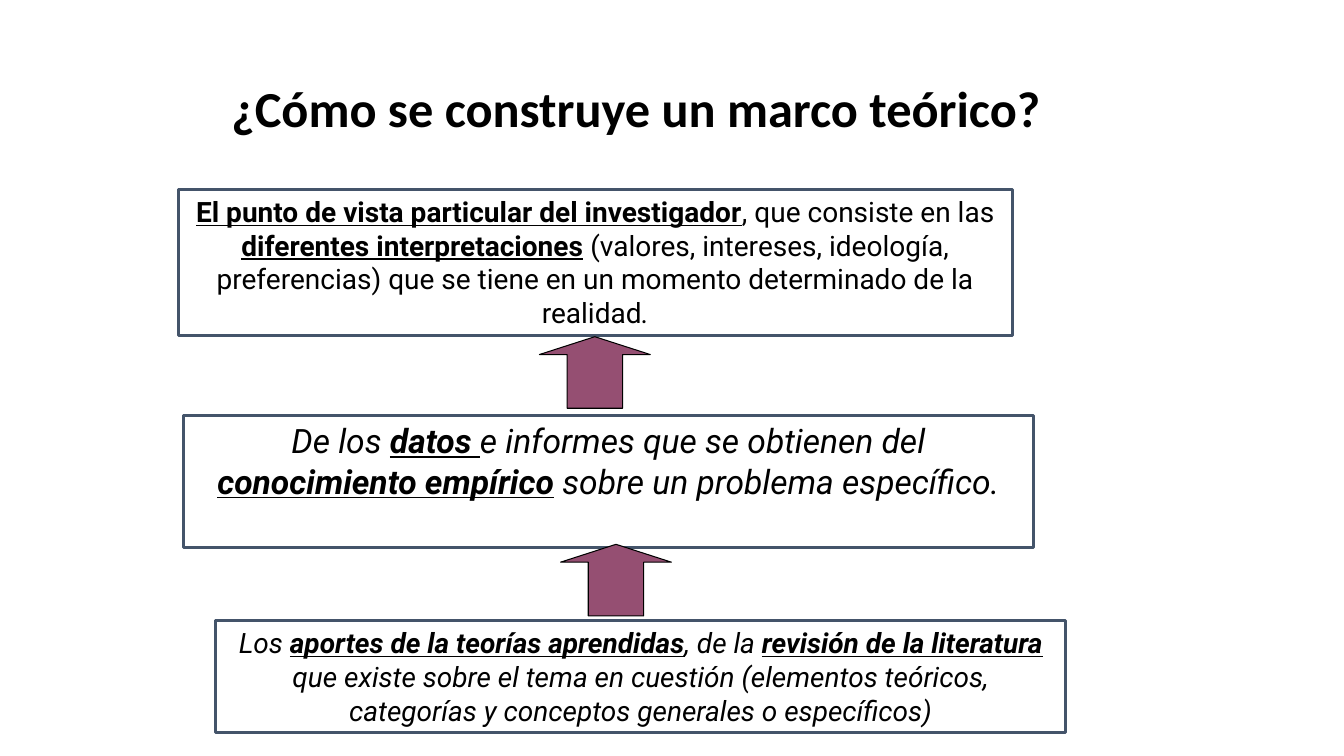
import pptx
import pptx.dml.color
import pptx.enum.shapes
import pptx.enum.text
import pptx.util
from pptx.util import Inches

COLORS = {"text": "000000", "frame": "44546A", "arrow": "954F72"}
SHAPES = pptx.enum.shapes.MSO_SHAPE
TEXT = pptx.enum.text


def rgb(name):
    return pptx.dml.color.RGBColor.from_string(COLORS[name])


class FrameworkSlide:
    """Holds the current slide and the style of its elements."""

    title_font = "Calibri"
    body_font = "Roboto"

    def __init__(self, deck):
        self.slide = deck.slides.add_slide(deck.slide_layouts[6])

    def add_words(self, paragraph, text, font, size, bold=False, italic=False, underline=False):
        run = paragraph.add_run()
        run.text = text
        run.font.name = font
        run.font.size = pptx.util.Pt(size)
        run.font.bold = bold
        run.font.italic = italic
        run.font.underline = underline
        run.font.color.rgb = rgb("text")

    def title(self, place, text):
        frame = self.slide.shapes.add_textbox(*map(Inches, place)).text_frame
        frame.word_wrap = True
        frame.vertical_anchor = TEXT.MSO_ANCHOR.MIDDLE
        heading = frame.paragraphs[0]
        heading.alignment = TEXT.PP_ALIGN.CENTER
        heading.line_spacing = 0.9
        self.add_words(heading, text, self.title_font, 36, bold=True)

    def shape(self, kind, place, line, weight):
        shape = self.slide.shapes.add_shape(kind, *map(Inches, place))
        shape.shadow.inherit = False
        shape.line.color.rgb = rgb(line)
        shape.line.width = pptx.util.Pt(weight)
        return shape

    def source_box(self, place, size, pieces, italic):
        """Each piece is (text, emphasised) or (text, emphasised, italic)."""
        box = self.shape(SHAPES.RECTANGLE, place, "frame", 2.25)
        box.fill.background()
        frame = box.text_frame
        frame.word_wrap = True
        frame.auto_size = TEXT.MSO_AUTO_SIZE.SHAPE_TO_FIT_TEXT
        frame.vertical_anchor = TEXT.MSO_ANCHOR.TOP
        statement = frame.paragraphs[0]
        statement.alignment = TEXT.PP_ALIGN.CENTER
        for text, strong, *slant in pieces:
            self.add_words(statement, text, self.body_font, size, bold=strong,
                           italic=slant[0] if slant else italic, underline=strong)

    def up_arrow(self, left, top):
        arrow = self.shape(SHAPES.UP_ARROW, (left, top, 1.1, 0.71), "text", 0.75)
        arrow.fill.solid()
        arrow.fill.fore_color.rgb = rgb("arrow")
        arrow.adjustments[0] = 0.5
        arrow.adjustments[1] = 0.25


def main():
    deck = pptx.Presentation()
    deck.slide_width, deck.slide_height = Inches(13.33), Inches(7.5)
    framework = FrameworkSlide(deck)

    # Title
    framework.title((2.05, 0.72, 8.52, 0.76), "¿Cómo se construye un marco teórico?")

    # Theory, at the base
    framework.source_box((2.14, 6.16, 8.43, 1.11), 20, [
        ("Los ", False),
        ("aportes de la teorías aprendidas", True),
        (", de la ", False),
        ("revisión de la literatura", True),
        (" que existe sobre el tema en cuestión (elementos teóricos, "
         "categorías y conceptos generales o específicos)", False),
    ], italic=True)

    # Empirical knowledge, in the middle
    framework.source_box((1.82, 4.12, 8.43, 1.31), 24, [
        ("De los ", False),
        ("datos ", True),
        ("e informes que se obtienen del ", False),
        ("conocimiento empírico", True),
        (" sobre un problema específico.", False),
    ], italic=True)

    # The researcher's point of view, on top
    framework.source_box((1.77, 1.88, 8.27, 1.45), 20, [
        ("El punto de vista particular del investigador", True),
        (", que consiste en las ", False),
        ("diferentes interpretaciones", True),
        (" (valores, intereses, ideología, preferencias) que se tiene "
         "en un momento determinado de la realidad", False),
        (".", False, True),
    ], italic=False)

    # Arrows from each level to the one above
    for left, top in ((5.56, 5.4), (5.35, 3.34)):
        framework.up_arrow(left, top)

    deck.save("out.pptx")


if __name__ == "__main__":
    main()
